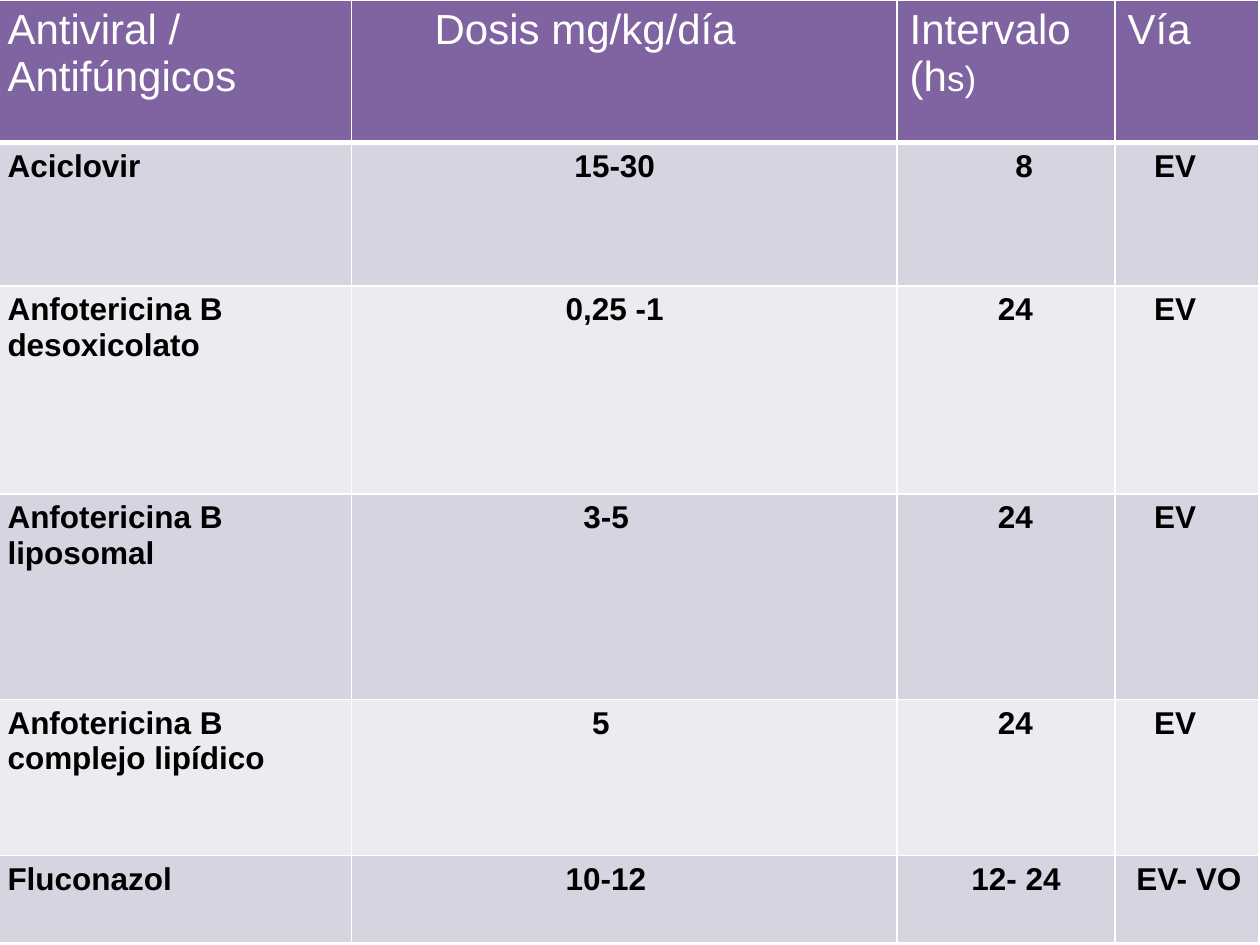
import pptx
import pptx.dml.color
import pptx.oxml
import pptx.oxml.ns
import pptx.util

Inches = pptx.util.Inches
Pt = pptx.util.Pt

COLORS = {
    "header": "8064A2",
    "odd": "D8D3E0",
    "even": "EDEAF0",
    "white": "FFFFFF",
    "black": "000000",
}
COLUMN_WIDTHS = [2.83, 4.33, 1.73, 1.14]
ROW_HEIGHTS = [1.13, 1.14, 1.65, 1.63, 1.24, 0.69]
HEADINGS = [
    ("Antiviral /\nAntifúngicos", 0.1),
    ("Dosis mg/kg/día", 0.66),
    ("Intervalo (h", 0.1),
    ("Vía", 0.1),
]
DRUGS = [
    [("Aciclovir", 0.1), ("15-30", 1.77), ("8", 0.94), ("EV", 0.31)],
    [("Anfotericina B\ndesoxicolato", 0.1), ("0,25 -1", 1.7), ("24", 0.8), ("EV", 0.31)],
    [("Anfotericina B\nliposomal", 0.1), ("3-5", 1.84), ("24", 0.8), ("EV", 0.31)],
    [("Anfotericina B\ncomplejo lipídico", 0.1), ("5", 1.91), ("24", 0.8), ("EV", 0.31)],
    [("Fluconazol", 0.1), ("10-12", 1.7), ("12- 24", 0.59), ("EV- VO", 0.17)],
]


class SlideBuilder:
    """Holds the table style and the current slide."""

    font_name = "Arial"
    header_size = 24
    body_size = 18

    def __init__(self, page):
        self.page = page

    def color(self, name):
        return pptx.dml.color.RGBColor.from_string(COLORS[name])

    def add_table(self, left, top, widths, heights):
        frame = self.page.shapes.add_table(
            len(heights), len(widths), Inches(left), Inches(top),
            Inches(sum(widths)), Inches(sum(heights)))
        table = frame.table
        for column, width in zip(table.columns, widths):
            column.width = Inches(width)
        for row, height in zip(table.rows, heights):
            row.height = Inches(height)
        return table

    def set_borders(self, cell, top, bottom):
        properties = cell._tc.get_or_add_tcPr()
        for side, width in (("L", 1), ("R", 1), ("T", top), ("B", bottom)):
            properties.append(pptx.oxml.parse_xml(
                f'<a:ln{side} {pptx.oxml.ns.nsdecls("a")} w="{Pt(width)}">'
                f'<a:solidFill><a:srgbClr val="{COLORS["white"]}"/></a:solidFill>'
                f'</a:ln{side}>'))

    def fill_cell(self, cell, text, indent, row_index):
        is_header = row_index == 0
        self.set_borders(cell, 3 if row_index == 1 else 1, 3 if is_header else 1)
        fill = "header" if is_header else ("even", "odd")[row_index % 2]
        cell.fill.solid()
        cell.fill.fore_color.rgb = self.color(fill)
        cell.margin_left = Inches(indent)
        cell.text = text
        for para in cell.text_frame.paragraphs:
            para.font.name = self.font_name
            para.font.size = Pt(self.header_size if is_header else self.body_size)
            para.font.bold = not is_header
            para.font.color.rgb = self.color("white" if is_header else "black")

    def add_span(self, cell, text, size):
        span = cell.text_frame.paragraphs[0].add_run()
        span.text = text
        span.font.size = Pt(size)


def main():
    deck = pptx.Presentation()
    deck.slide_width = Inches(10)
    deck.slide_height = Inches(7.5)
    builder = SlideBuilder(deck.slides.add_slide(deck.slide_layouts[6]))
    doses = builder.add_table(-0.04, 0, COLUMN_WIDTHS, ROW_HEIGHTS)
    for row_index, entries in enumerate([HEADINGS] + DRUGS):
        for column_index, (text, indent) in enumerate(entries):
            builder.fill_cell(doses.cell(row_index, column_index), text, indent, row_index)
    builder.add_span(doses.cell(0, 2), "s)", 20)
    deck.save("out.pptx")


if __name__ == "__main__":
    main()
